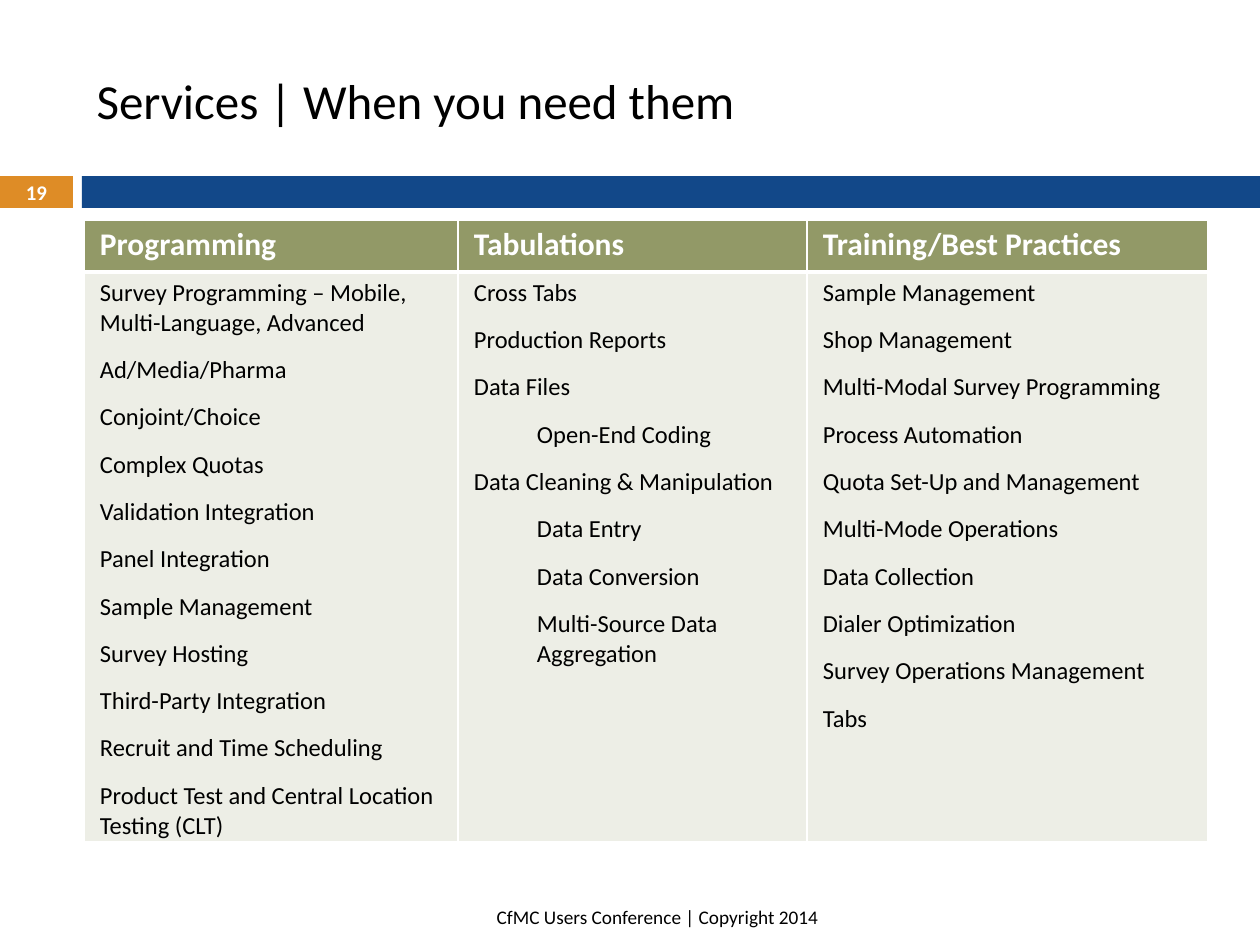
from lxml import etree
from pptx import Presentation
from pptx.dml.color import RGBColor
from pptx.enum.shapes import MSO_SHAPE
from pptx.enum.text import MSO_ANCHOR, PP_ALIGN
from pptx.oxml.ns import qn
from pptx.util import Pt

RECTANGLE = MSO_SHAPE.RECTANGLE
MIDDLE = MSO_ANCHOR.MIDDLE
LEFT, CENTER, RIGHT = PP_ALIGN.LEFT, PP_ALIGN.CENTER, PP_ALIGN.RIGHT

COLORS = {
    "orange": "DE8C26",
    "blue": "124889",
    "olive": "929967",
    "pale": "EDEEE6",
    "black": "000000",
    "white": "FFFFFF",
}
EMU_PER_INCH, PX_PER_INCH = 914400, 126
TITLE_ONLY = 5


def px(*lengths):
    return [round(n * EMU_PER_INCH / PX_PER_INCH) for n in lengths]


def style(paragraph, size, color, bold=False, align=LEFT):
    paragraph.alignment = align
    font = paragraph.font
    font.name, font.size, font.bold = "Calibri", Pt(size), bold
    font.color.rgb = RGBColor.from_string(COLORS[color])


services = [
    ("Programming", 374, [
        (0, "Survey Programming – Mobile, Multi-Language, Advanced"),
        (0, "Ad/Media/Pharma"),
        (0, "Conjoint/Choice"),
        (0, "Complex Quotas"),
        (0, "Validation Integration"),
        (0, "Panel Integration"),
        (0, "Sample Management"),
        (0, "Survey Hosting"),
        (0, "Third-Party Integration"),
        (0, "Recruit and Time Scheduling"),
        (0, "Product Test and Central Location Testing (CLT)"),
    ]),
    ("Tabulations", 349, [
        (0, "Cross Tabs"),
        (0, "Production Reports"),
        (0, "Data Files"),
        (1, "Open-End Coding"),
        (0, "Data Cleaning & Manipulation"),
        (1, "Data Entry"),
        (1, "Data Conversion"),
        (1, "Multi-Source Data Aggregation"),
    ]),
    ("Training/Best Practices", 401, [
        (0, "Sample Management"),
        (0, "Shop Management"),
        (0, "Multi-Modal Survey Programming"),
        (0, "Process Automation"),
        (0, "Quota Set-Up and Management"),
        (0, "Multi-Mode Operations"),
        (0, "Data Collection"),
        (0, "Dialer Optimization"),
        (0, "Survey Operations Management"),
        (0, "Tabs"),
    ]),
]

prs = Presentation()
prs.slide_width, prs.slide_height = px(1260, 945)
slide = prs.slides.add_slide(prs.slide_layouts[TITLE_ONLY])

for left, width, color in [(0, 73, "orange"), (82, 1178, "blue")]:
    band = slide.shapes.add_shape(RECTANGLE, *px(left, 176, width, 32))
    band.shadow.inherit = False
    band.fill.solid()
    band.fill.fore_color.rgb = RGBColor.from_string(COLORS[color])
    band.line.fill.background()

title = slide.shapes.title
title.left, title.top, title.width, title.height = px(84, 32, 1124, 136)
title.text_frame.text = "Services | When you need them"
title.text_frame.vertical_anchor = MIDDLE
style(title.text_frame.paragraphs[0], 28, "black")

for text, place, size, color, bold, align in [
    ("CfMC Users Conference | Copyright 2014", (84, 892, 747, 50), 11, "black", False, RIGHT),
    ("19", (0, 175, 73, 34), 11.9, "white", True, CENTER),
]:
    frame = slide.shapes.add_textbox(*px(*place)).text_frame
    frame.word_wrap = True
    frame.vertical_anchor = MIDDLE
    frame.text = text
    style(frame.paragraphs[0], size, color, bold, align)

table = slide.shapes.add_table(2, len(services), *px(84, 220, 1124, 621)).table
table.horz_banding = False
table.rows[0].height, table.rows[1].height = px(52, 569)

for col, (heading, width, items) in enumerate(services):
    table.columns[col].width = px(width)[0]
    header, body = table.cell(0, col), table.cell(1, col)

    header.text = heading
    style(header.text_frame.paragraphs[0], 18, "white", True)

    body.text = "\n".join(text for _, text in items)
    for i, (paragraph, (level, _)) in enumerate(zip(body.text_frame.paragraphs, items)):
        paragraph.level = level
        if level:
            paragraph._p.get_or_add_pPr().set("marL", str(px(63)[0]))
        if i:
            paragraph.space_before = Pt(4)
        paragraph.space_after = Pt(6)
        style(paragraph, 14, "black")

    for cell, color, thick_side in [(header, "olive", "lnB"), (body, "pale", "lnT")]:
        cell.margin_left, cell.margin_right = px(16, 16)
        cell.margin_top, cell.margin_bottom = px(6, 6)
        properties = cell._tc.get_or_add_tcPr()
        for side in ("lnL", "lnR", "lnT", "lnB"):
            points = 3 if side == thick_side else 1
            border = etree.SubElement(properties, qn("a:" + side), w=str(Pt(points)))
            line_fill = etree.SubElement(border, qn("a:solidFill"))
            etree.SubElement(line_fill, qn("a:srgbClr"), val=COLORS["white"])
        cell.fill.solid()
        cell.fill.fore_color.rgb = RGBColor.from_string(COLORS[color])

prs.save("out.pptx")
